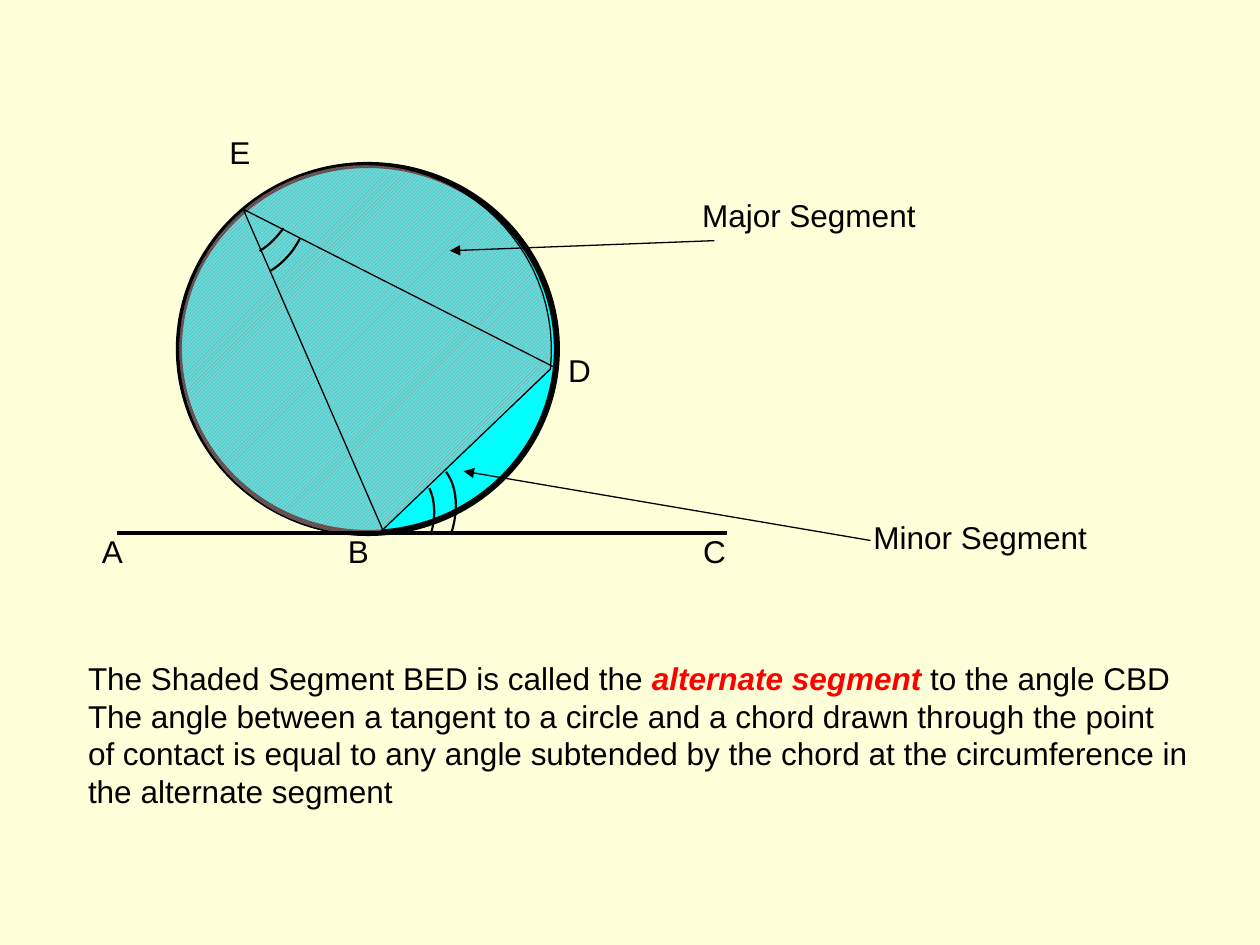
"""Build the alternate segment theorem slide."""
from math import cos, radians, sin

from pptx import Presentation, util as u
from pptx.dml.color import RGBColor
from pptx.enum import dml, shapes, text as t
from pptx.oxml import parse_xml
from pptx.oxml.ns import nsdecls, qn

INK, RED, CYAN = "000000", "FF0000", "00FFFF"
MID, RADII = (2.91, 2.77), (1.48, 1.47)
CHORD = (86, 366)
TURN, PIVOT = 308.1, (2.81, 2.69)
ANGLE = [(3.04, 4.21), (1.93, 1.66), (4.41, 2.92)]
ARCS = [
    (305.5, (3.27, 4.08), (2.96, 4.16),
     [(3.42, 4.24), (3.46, 4.11), (3.46, 3.98), (3.41, 3.87)]),
    (305.5, (3.46, 4.02), (3.13, 4.11),
     [(3.58, 4.23), (3.64, 4.05), (3.63, 3.86), (3.54, 3.74)]),
    (12.3, (2.09, 1.75), (1.96, 1.48),
     [(2.06, 1.99), (2.13, 1.95), (2.19, 1.89), (2.25, 1.81)]),
    (12.3, (2.2, 1.9), (2.06, 1.62),
     [(2.14, 2.15), (2.23, 2.10), (2.32, 2.01), (2.38, 1.89)]),
]
LINES = [
    ((0.93, 4.23), (5.77, 4.23), 1.75, False),
    ((5.67, 1.91), (3.57, 1.99), 0.75, True),
    ((6.91, 4.29), (3.68, 3.74), 0.75, True),
]
LABELS = [
    ("Major Segment", 5.47, 1.51, 1.9),
    ("Minor Segment", 6.83, 4.06, 1.9),
    ("A", 0.71, 4.17, 0.36),
    ("B", 2.66, 4.17, 0.37),
    ("C", 5.48, 4.17, 0.38),
    ("E", 1.72, 1.01, 0.37),
    ("D", 4.41, 2.74, 0.38),
]
RULE = [
    ["The Shaded Segment BED is called the ", ("alternate segment", RED),
     " to the angle CBD"],
    ["The angle between a tangent to a circle and a chord drawn through the point"],
    ["of contact is equal to any angle subtended by the chord at the circumference in"],
    ["the alternate segment"],
]


def tint(part, code):
    part.rgb = RGBColor.from_string(code)


def edge(shape, width):
    tint(shape.line.color, INK)
    shape.line.width = u.Pt(width)


def spin(point, pivot, angle):
    dx, dy = point[0] - pivot[0], point[1] - pivot[1]
    c, s = cos(radians(angle)), sin(radians(angle))
    return pivot[0] + dx * c - dy * s, pivot[1] + dx * s + dy * c


def trace(slide, points, width, close=False, turn=0, pivot=(0, 0), hub=None):
    def place(point):
        return [u.Inches(v) for v in spin(point, pivot, -turn)]

    pts = [place(p) for p in points]
    pen = slide.shapes.build_freeform(*pts[0])
    pen.add_line_segments(pts[1:], close=close)
    if hub:
        pen.move_to(*place(hub))
    shape = pen.convert_to_shape()
    shape.rotation = turn
    shape.shadow.inherit = False
    shape.fill.background()
    edge(shape, width)
    return shape


def curve(nodes, steps=12):
    out = []
    for i in range(steps + 1):
        k = i / steps
        parts = ((1 - k) ** 3, 3 * k * (1 - k) ** 2, 3 * k * k * (1 - k), k ** 3)
        out.append(tuple(sum(w * n[a] for w, n in zip(parts, nodes)) for a in (0, 1)))
    return out


def rim(start, end, step=4):
    return [(MID[0] + RADII[0] * cos(radians(a)), MID[1] + RADII[1] * sin(radians(a)))
            for a in range(start, end + 1, step)]


def hatch(shape, fore, back, alpha=50):
    fill = shape.fill
    fill.patterned()
    fill.pattern = dml.MSO_PATTERN.LIGHT_UPWARD_DIAGONAL
    tint(fill.fore_color, fore)
    tint(fill.back_color, back)
    for color in shape._element.spPr.find(qn("a:pattFill")).iter(qn("a:srgbClr")):
        color.append(parse_xml(f'<a:alpha {nsdecls("a")} val="{alpha * 1000}"/>'))


def rule(slide, start, end, width, arrow):
    ends = [u.Inches(v) for v in start + end]
    line = slide.shapes.add_connector(shapes.MSO_CONNECTOR.STRAIGHT, *ends)
    edge(line, width)
    props = line._element.spPr
    if arrow:
        props.find(qn("a:ln")).append(
            parse_xml(f'<a:tailEnd {nsdecls("a")} type="triangle"/>'))
    props.append(parse_xml(f'<a:effectLst {nsdecls("a")}/>'))


def write(slide, paras, x, y, w, h=0.4, align=t.PP_ALIGN.CENTER, size=18):
    box = slide.shapes.add_textbox(*map(u.Inches, (x, y, w, h)))
    frame = box.text_frame
    frame.word_wrap = False
    frame.auto_size = t.MSO_AUTO_SIZE.SHAPE_TO_FIT_TEXT
    for i, runs in enumerate(paras):
        para = frame.add_paragraph() if i else frame.paragraphs[0]
        para.alignment = align
        for item in runs:
            words, color = (item, INK) if isinstance(item, str) else item
            run = para.add_run()
            run.text = words
            run.font.name, run.font.size = "Arial", u.Pt(size)
            run.font.bold = run.font.italic = color != INK
            tint(run.font.color, color)


def main():
    deck = Presentation()
    deck.slide_width, deck.slide_height = u.Inches(10), u.Inches(7.5)
    slide = deck.slides.add_slide(deck.slide_layouts[6])
    slide.background.fill.solid()
    tint(slide.background.fill.fore_color, "FFFFD9")

    disc = slide.shapes.add_shape(shapes.MSO_SHAPE.OVAL,
                                  *map(u.Inches, (1.42, 1.31, 3, 2.92)))
    disc.shadow.inherit = False
    disc.fill.solid()
    tint(disc.fill.fore_color, CYAN)
    edge(disc, 3.5)

    major = trace(slide, rim(*CHORD), 0.75, close=True, turn=TURN, pivot=PIVOT)
    hatch(major, "C0C0C0", "FF5050")

    trace(slide, ANGLE, 0.75)
    for turn, pivot, hub, nodes in ARCS:
        trace(slide, curve(nodes), 1.25, turn=turn, pivot=pivot, hub=hub)
    for line in LINES:
        rule(slide, *line)
    for name, x, y, w in LABELS:
        write(slide, [[name]], x, y, w)
    write(slide, RULE, 0.6, 5.18, 8.99, 1.3, t.PP_ALIGN.LEFT)
    deck.save("out.pptx")


if __name__ == "__main__":
    main()
